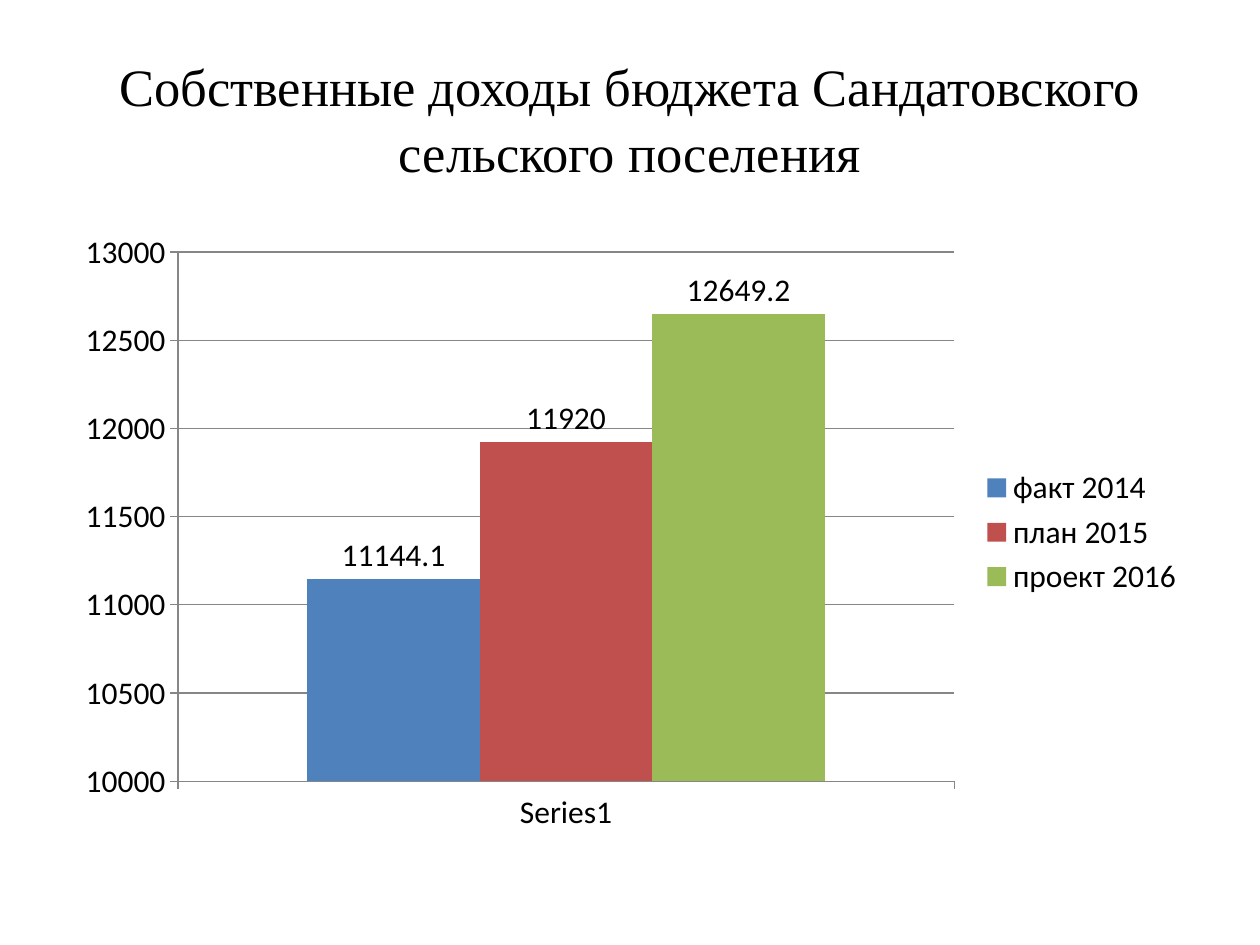
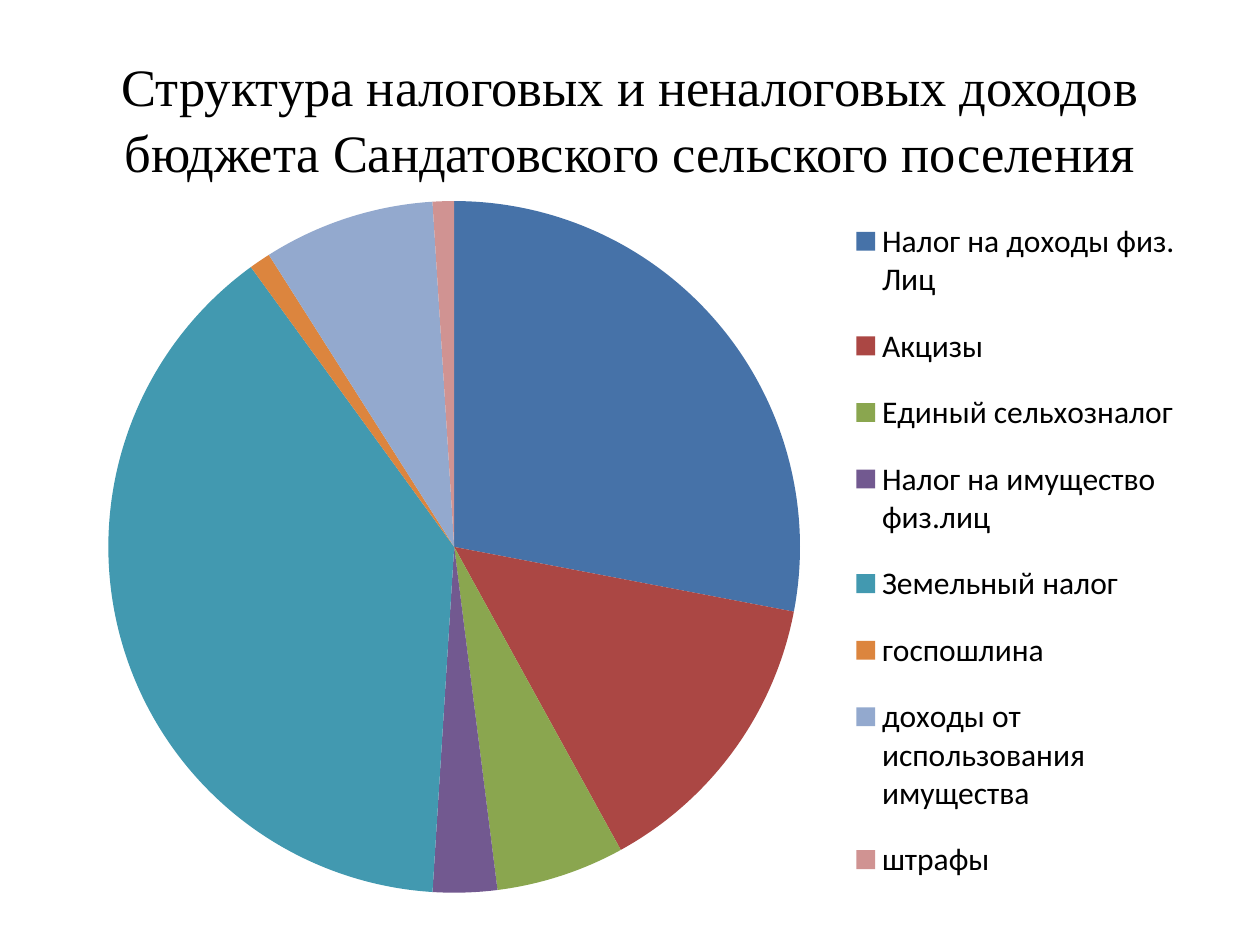
from dataclasses import dataclass

from lxml import etree
from pptx import Presentation
from pptx.chart.data import CategoryChartData
from pptx.dml.color import RGBColor
from pptx.enum import chart as ch, text
from pptx.oxml import ns
from pptx.util import Pt


@dataclass(frozen=True)
class Theme:
    title_font: str = "Times New Roman"
    title_size: int = 30
    chart_font: str = "Calibri"
    chart_size: int = 18
    ink: str = "000000"
    axis: str = "868686"
    bars: tuple = ("4F81BD", "C0504D", "9BBB59")
    slices: tuple = ("4672A8", "AB4744", "8AA64F", "725990",
                     "4299B0", "DC853E", "93A9CE", "D09392")


THEME = Theme()

# Content
OWN_INCOME_TITLE = "Собственные доходы бюджета Сандатовского сельского поселения"
OWN_INCOME = {"факт 2014": 11144.1, "план 2015": 11920, "проект 2016": 12649.2}

STRUCTURE_TITLE = ("Структура налоговых и неналоговых доходов бюджета "
                   "Сандатовского сельского поселения")
STRUCTURE = {
    "Налог на доходы физ. Лиц": 28,
    "Акцизы": 14,
    "Единый сельхозналог": 6,
    "Налог на имущество физ.лиц": 3,
    "Земельный налог": 39,
    "госпошлина": 1,
    "доходы от использования имущества": 8,
    "штрафы": 1,
}

# Places in points: left, top, width, height
TITLE_BOX = (36, 21.6, 648, 90)
BAR_BOX = (36, 126, 648, 356.4)
PIE_BOX = (36, 106.56, 648, 416.16)
# Shares of the pie chart's frame
PIE_PLOT = (0.04, 0.02, 0.61, 0.95)
PIE_LEGEND = (0.69, 0.01, 0.3, 0.98)


def rgb(value):
    return RGBColor.from_string(value)


def points(box):
    return [Pt(length) for length in box]


def add_titled_slide(deck, heading):
    slide = deck.slides.add_slide(deck.slide_layouts[5])
    title = slide.shapes.title
    title.left, title.top, title.width, title.height = points(TITLE_BOX)
    title.text = heading
    title.text_frame.vertical_anchor = text.MSO_ANCHOR.MIDDLE
    paragraph = title.text_frame.paragraphs[0]
    paragraph.alignment = text.PP_ALIGN.CENTER
    paragraph.line_spacing = 1.05
    paragraph.font.name = THEME.title_font
    paragraph.font.size = Pt(THEME.title_size)
    paragraph.font.color.rgb = rgb(THEME.ink)
    return slide


def add_chart(slide, kind, box, data):
    chart = slide.shapes.add_chart(kind, *points(box), data).chart
    chart.has_title = False
    chart.font.name = THEME.chart_font
    chart.font.size = Pt(THEME.chart_size)
    chart.font.color.rgb = rgb(THEME.ink)
    chart.has_legend = True
    chart.legend.position = ch.XL_LEGEND_POSITION.RIGHT
    chart.legend.include_in_layout = False
    return chart


def paint(part, color):
    part.format.fill.solid()
    part.format.fill.fore_color.rgb = rgb(color)


def set_layout(parent, before, shares, inner=False):
    """Place a chart part by hand, right after the child named before."""
    for old in parent.findall(ns.qn("c:layout")):
        parent.remove(old)
    layout = etree.Element(ns.qn("c:layout"))
    manual = etree.SubElement(layout, ns.qn("c:manualLayout"))
    settings = [("layoutTarget", "inner")] if inner else []
    settings += [("xMode", "edge"), ("yMode", "edge"), *zip("xywh", shares)]
    for tag, value in settings:
        etree.SubElement(manual, ns.qn(f"c:{tag}")).set("val", str(value))
    if before:
        parent.find(ns.qn(before)).addnext(layout)
    else:
        parent.insert(0, layout)


def add_own_income(deck):
    data = CategoryChartData()
    data.categories = ["Series1"]
    for name, amount in OWN_INCOME.items():
        data.add_series(name, [amount])
    slide = add_titled_slide(deck, OWN_INCOME_TITLE)
    chart = add_chart(slide, ch.XL_CHART_TYPE.COLUMN_CLUSTERED, BAR_BOX, data)

    # Columns and their values
    plot = chart.plots[0]
    plot.vary_by_categories = False
    plot.gap_width, plot.overlap = 150, 0
    plot.has_data_labels = True
    plot.data_labels.show_value = True
    plot.data_labels.position = ch.XL_LABEL_POSITION.OUTSIDE_END
    for series, color in zip(plot.series, THEME.bars):
        paint(series, color)

    # Axes and grid
    amounts = chart.value_axis
    amounts.minimum_scale, amounts.maximum_scale = 10000, 13000
    amounts.major_unit = 500
    amounts.has_major_gridlines = True
    for ruled in (amounts, chart.category_axis, amounts.major_gridlines):
        ruled.format.line.color.rgb = rgb(THEME.axis)
        ruled.format.line.width = Pt(0.75)
    for axis in (amounts, chart.category_axis):
        axis.major_tick_mark = ch.XL_TICK_MARK.OUTSIDE


def add_structure(deck):
    data = CategoryChartData()
    data.categories = list(STRUCTURE)
    data.add_series("Series 1", list(STRUCTURE.values()))
    slide = add_titled_slide(deck, STRUCTURE_TITLE)
    chart = add_chart(slide, ch.XL_CHART_TYPE.PIE, PIE_BOX, data)

    plot = chart.plots[0]
    plot.vary_by_categories = True
    for index, color in enumerate(THEME.slices):
        paint(plot.series[0].points[index], color)

    plot_area = chart.element.chart.plotArea
    set_layout(plot_area, None, PIE_PLOT, inner=True)
    set_layout(plot_area.getparent().find(ns.qn("c:legend")),
               "c:legendPos", PIE_LEGEND)


def main():
    deck = Presentation()
    deck.slide_width, deck.slide_height = Pt(720), Pt(540)
    add_own_income(deck)
    add_structure(deck)
    deck.save("out.pptx")


if __name__ == "__main__":
    main()
